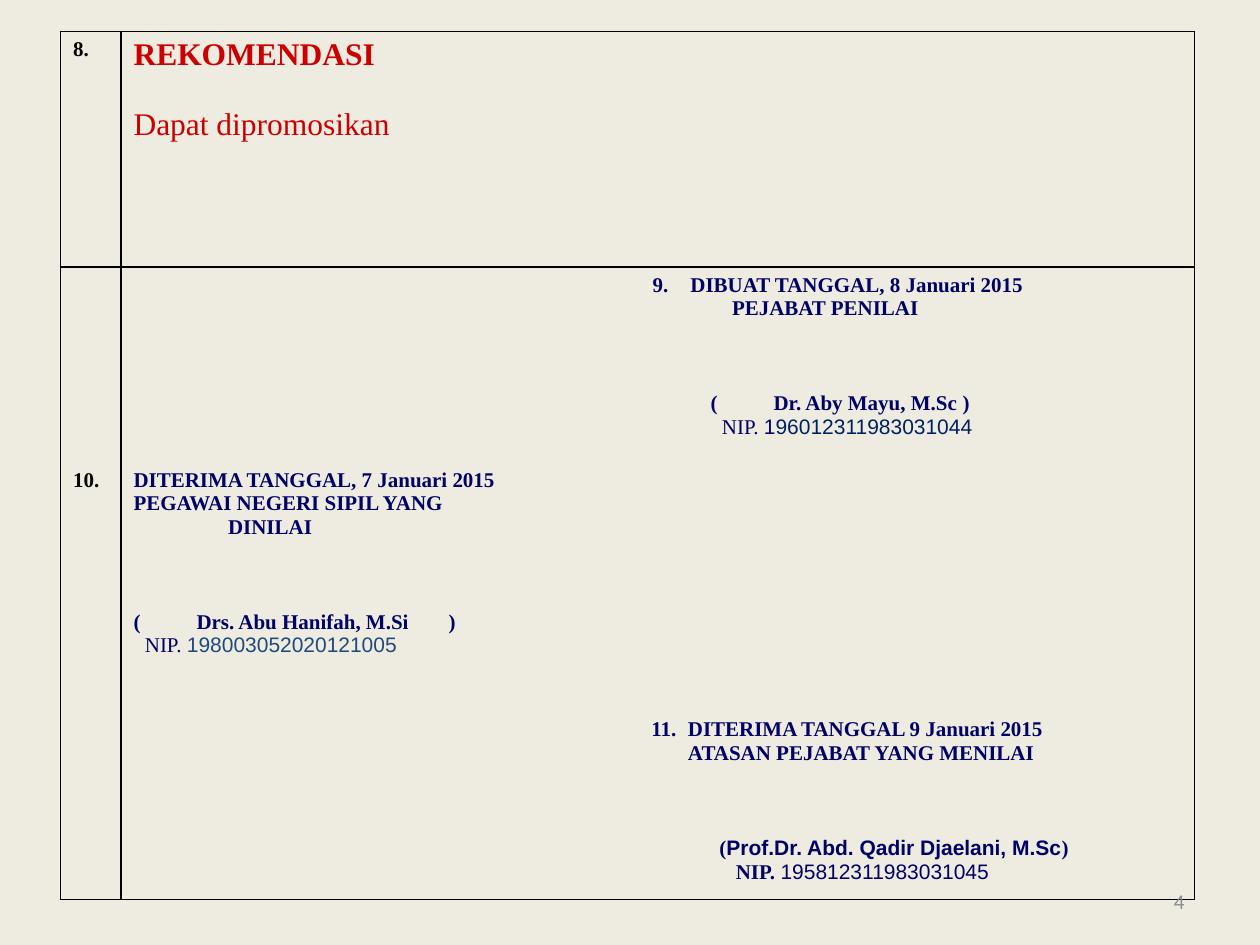
from lxml import etree
from pptx import Presentation
from pptx.dml.color import RGBColor
from pptx.enum.text import MSO_ANCHOR, PP_ALIGN
from pptx.oxml.ns import qn
from pptx.util import Inches, Pt

MIDDLE = MSO_ANCHOR.MIDDLE
RIGHT = PP_ALIGN.RIGHT
BLACK = RGBColor(0x00, 0x00, 0x00)
RED = RGBColor(0xCC, 0x00, 0x00)
NAVY = RGBColor(0x00, 0x00, 0x66)
DEEP = RGBColor(0x00, 0x20, 0x60)
BLUE = RGBColor(0x1F, 0x49, 0x7D)
GREY = RGBColor(0x8C, 0x8C, 0x8C)
CREAM = RGBColor(0xEE, 0xEC, 0xE1)
SERIF, SANS = "Times New Roman", "Arial"
GAP = 41  # room for a signature, in points


def style(font, name, size, bold, color):
    font.name, font.size, font.bold = name, Pt(size), bold
    font.color.rgb = color


def write(cell, lines, color=NAVY, size=12):
    """Fill a cell with (runs, left, hang, tabs, space before) lines.

    A run is (text, font, bold, color); a plain string is one bold serif run.
    """
    frame = cell.text_frame
    for i, (runs, left, hang, tabs, gap) in enumerate(lines):
        para = frame.add_paragraph() if i else frame.paragraphs[0]
        props = para._p.get_or_add_pPr()
        props.set("marL", str(Inches(left)))
        props.set("indent", str(Inches(-hang)))
        if tabs:
            stops = etree.SubElement(props, qn("a:tabLst"))
            for tab in tabs:
                etree.SubElement(stops, qn("a:tab"), pos=str(Inches(tab)), algn="l")
        para.space_before = Pt(gap)
        if isinstance(runs, str):
            para.add_run().text = runs
            style(para.font, SERIF, size, True, color)
            continue
        for text, name, bold, tint in runs:
            run = para.add_run()
            run.text = text
            style(run.font, name, size, bold, tint)


prs = Presentation()
prs.slide_width, prs.slide_height = Inches(10), Inches(7.5)
slide = prs.slides.add_slide(prs.slide_layouts[6])
slide.background.fill.solid()
slide.background.fill.fore_color.rgb = CREAM

widths = [0.48, 4.11, 4.41]
heights = [1.87, 1.55, 1.98, 1.49]
table = slide.shapes.add_table(
    4, 3, Inches(0.48), Inches(0.25), Inches(sum(widths)), Inches(sum(heights))
).table
table.first_row = table.horz_banding = False
for col, width in zip(table.columns, widths):
    col.width = Inches(width)
for row, height in zip(table.rows, heights):
    row.height = Inches(height)

# Rules frame the number column, the first row and the signature area
for r in range(4):
    for c in range(3):
        cell = table.cell(r, c)
        props = cell._tc.get_or_add_tcPr()
        sides = {"L": c < 2, "R": c != 1 or r == 0, "T": r < 2, "B": r in (0, 3)}
        for side, shown in sides.items():
            line = etree.SubElement(props, qn("a:ln" + side), w=str(Pt(1)))
            if shown:
                fill = etree.SubElement(line, qn("a:solidFill"))
                etree.SubElement(fill, qn("a:srgbClr"), val=str(BLACK))
            else:
                etree.SubElement(line, qn("a:noFill"))
        cell.fill.background()
table.cell(0, 1).merge(table.cell(0, 2))

write(table.cell(0, 0), [("8.", 0, 0, [], 0)], BLACK)
write(table.cell(2, 0), [("10.", 0, 0, [], 0)], BLACK)
write(table.cell(0, 1), [
    ("REKOMENDASI", 0, 0, [], 0),
    ([("Dapat dipromosikan", SERIF, False, RED)], 0, 0, [], 20),
], RED, 18)
write(table.cell(1, 2), [
    ("9.\tDIBUAT TANGGAL, 8 Januari 2015", 0.31, 0.3, [0.31], 0),
    ("PEJABAT PENILAI", 0.64, 0, [], 0),
    ("(\tDr. Aby Mayu, M.Sc\t)", 0.47, 0, [1.07, 3.31], GAP),
    ([("NIP. ", SERIF, False, NAVY), ("1", SANS, False, NAVY),
      ("96012311983031044", SANS, False, DEEP)], 0.56, 0, [], 0),
])
write(table.cell(2, 1), [
    ("DITERIMA TANGGAL, 7 Januari 2015", 0, 0, [], 0),
    ("PEGAWAI NEGERI SIPIL YANG", 0, 0, [], 0),
    ("DINILAI", 0.75, 0, [], 0),
    ("(\tDrs. Abu Hanifah, M.Si\t)", 0, 0, [0.43, 2.61], GAP),
    ([("NIP. ", SERIF, False, NAVY),
      ("198003052020121005", SANS, False, BLUE)], 0.09, 0, [], 0),
])
write(table.cell(3, 2), [
    ("11.\tDITERIMA TANGGAL 9 Januari 2015", 0.29, 0.29, [0.29], 0),
    ("ATASAN PEJABAT YANG MENILAI", 0.29, 0, [], 0),
    ([("(", SERIF, True, NAVY),
      ("Prof.Dr. Abd. Qadir Djaelani, M.Sc", SANS, True, NAVY),
      (")", SERIF, True, NAVY)], 0.54, 0, [], GAP),
    ([("NIP. ", SERIF, True, NAVY),
      ("195812311983031045", SANS, False, NAVY)], 0.67, 0, [], 0),
])

box = slide.shapes.add_textbox(Inches(7.17), Inches(6.95), Inches(2.33), Inches(0.4))
frame = box.text_frame
frame.word_wrap = True
frame.vertical_anchor = MIDDLE
number = frame.paragraphs[0]
number.text = "4"
number.alignment = RIGHT
style(number.font, "Calibri", 12, False, GREY)

prs.save("out.pptx")
